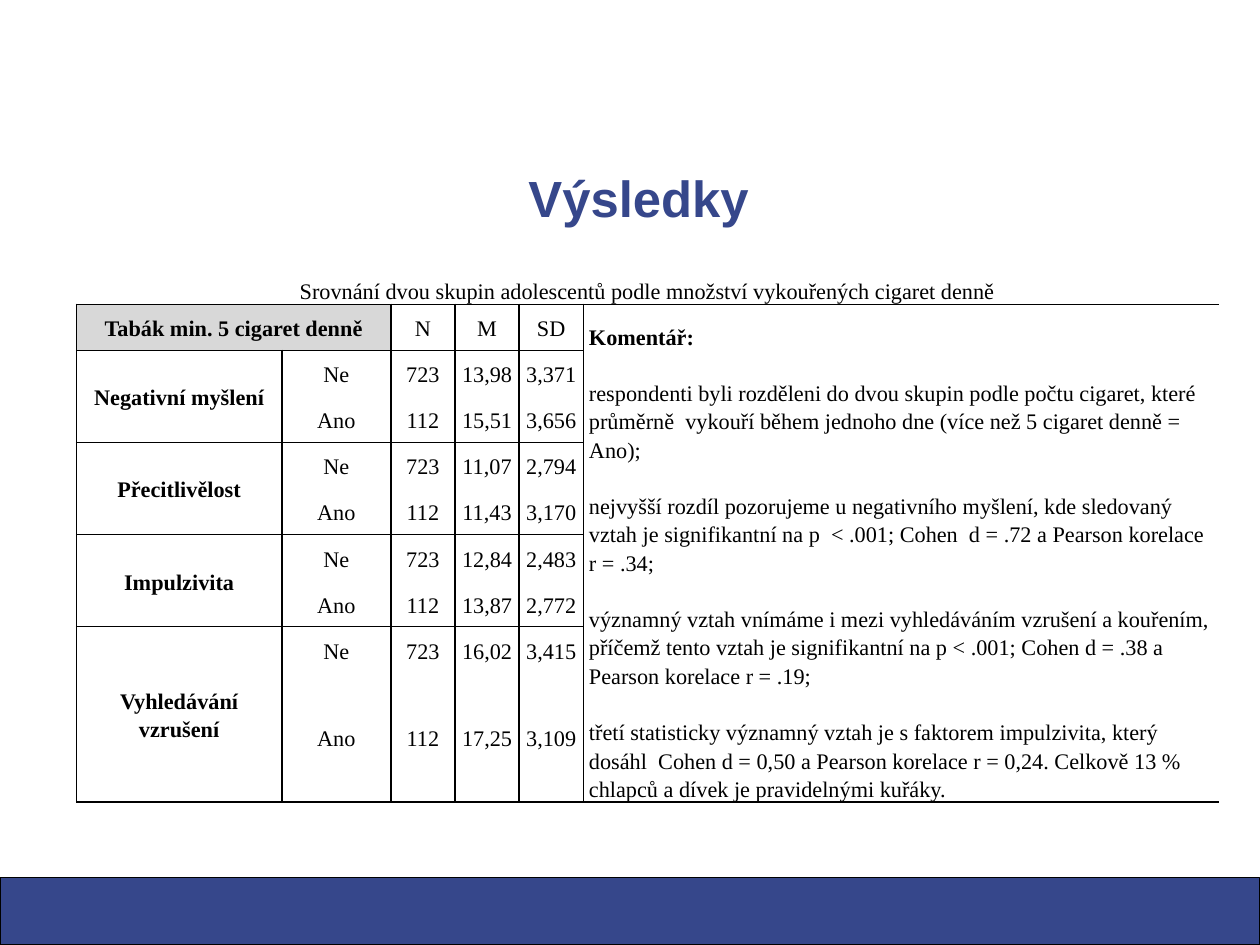
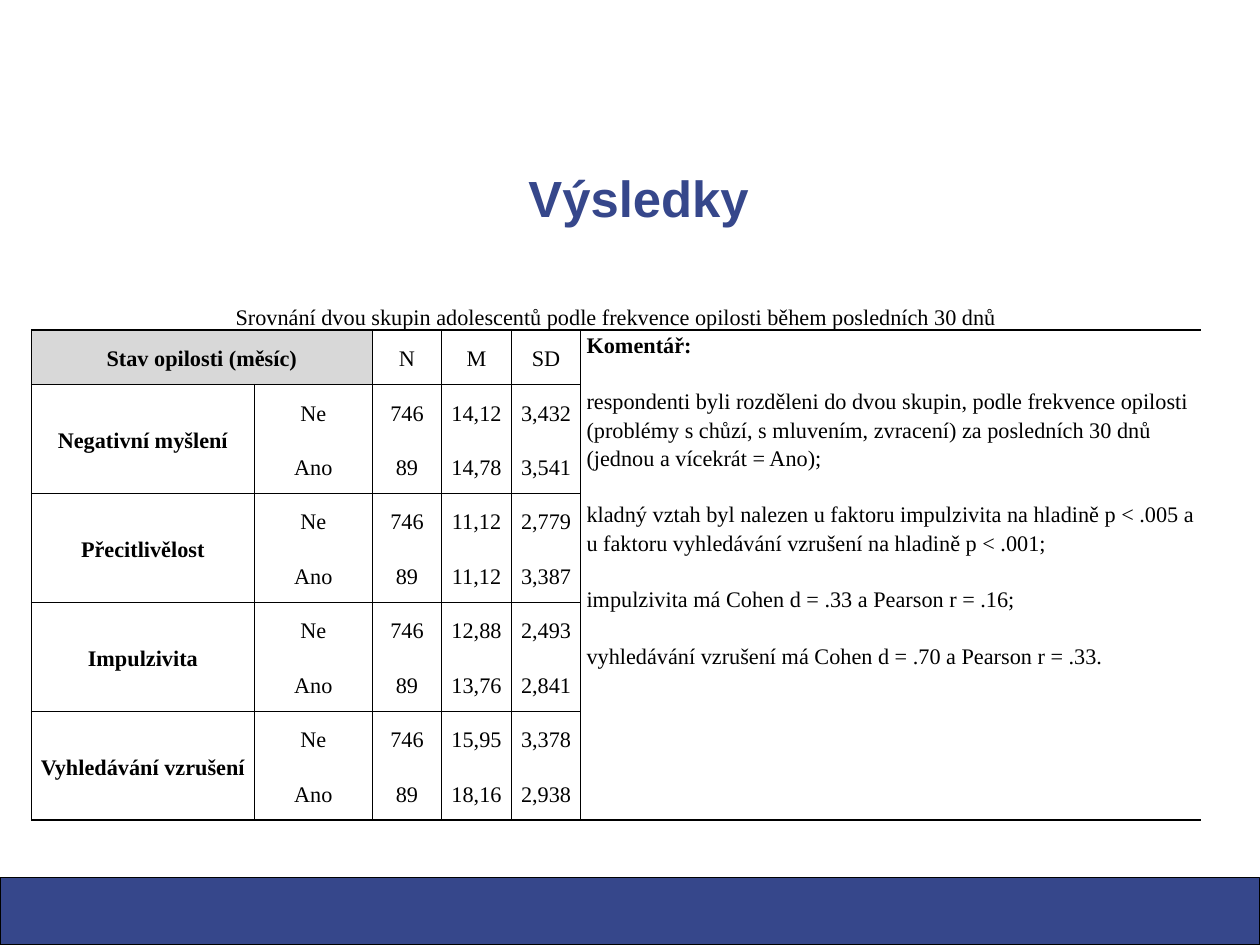
from dataclasses import dataclass
from lxml import etree
from pptx import Presentation
from pptx import util as u
from pptx.dml.color import RGBColor
from pptx.enum import shapes, text
from pptx.oxml import ns

Pt = u.Pt
WIDE, HIGH = 793.75, 595.25
PLAIN = "{2D5ABB26-0587-4C30-8999-92F81FD0307C}"
MID = text.PP_ALIGN.CENTER
LEFT = text.PP_ALIGN.LEFT


@dataclass(frozen=True)
class Theme:
    blue: str = "36478B"
    ink: str = "000000"
    grey: str = "D8D8D8"
    head: str = "Arial"
    body: str = "Times New Roman"
    big: float = 32
    small: float = 14
    lead: float = 1.15
    tight: float = 0.96
    gap: float = 17.8
    pad: float = 3.6
    rule: float = 1


T = Theme()


def tint(code):
    return RGBColor.from_string(code)


def style(para, face, size, color, bold, align, lead):
    para.alignment = align
    para.line_spacing = lead
    for run in para.runs:
        font = run.font
        font.name, font.size, font.bold = face, Pt(size), bold
        font.color.rgb = tint(color)


def edge(cell, sides, bare=""):
    props = cell._tc.get_or_add_tcPr()
    for side in "LRTB":
        if side in sides + bare:
            line = etree.SubElement(props, ns.qn(f"a:ln{side}"), w=str(Pt(T.rule)))
            if side in bare:
                etree.SubElement(line, ns.qn("a:noFill"))
            else:
                fill = etree.SubElement(line, ns.qn("a:solidFill"))
                etree.SubElement(fill, ns.qn("a:srgbClr"), val=T.ink)


def put(cell, lines, sides, bare="", bold=False, align=MID, lead=T.lead,
        anchor=text.MSO_ANCHOR.MIDDLE, fill=None):
    cell.margin_left = cell.margin_right = Pt(T.pad)
    cell.margin_top = cell.margin_bottom = 0
    cell.vertical_anchor = anchor
    edge(cell, sides, bare)
    if fill:
        cell.fill.solid()
        cell.fill.fore_color.rgb = tint(fill)
    else:
        cell.fill.background()
    cell.text_frame.text = "\n".join(lines)
    for i, para in enumerate(cell.text_frame.paragraphs):
        style(para, T.body, T.small, T.ink, bold, align, lead)
        if i:
            para.space_before = Pt(T.gap)


def band(slide, x, y, w, h):
    bar = slide.shapes.add_shape(shapes.MSO_SHAPE.RECTANGLE, Pt(x), Pt(y), Pt(w), Pt(h))
    bar.shadow.inherit = False
    bar.fill.solid()
    bar.fill.fore_color.rgb = tint(T.blue)
    bar.line.color.rgb = tint(T.ink)
    bar.line.width = Pt(0.75)


def title(slide, words, x, y, w, h):
    frame = slide.shapes.add_textbox(Pt(x), Pt(y), Pt(w), Pt(h)).text_frame
    frame.word_wrap = True
    frame.margin_left = frame.margin_right = frame.margin_top = frame.margin_bottom = 0
    frame.vertical_anchor = text.MSO_ANCHOR.MIDDLE
    frame.text = words
    style(frame.paragraphs[0], T.head, T.big, T.blue, True, MID, T.tight)


def grid(slide, data, x, y, cols, rows):
    frame = slide.shapes.add_table(len(rows), len(cols), Pt(x), Pt(y),
                                   Pt(sum(cols)), Pt(sum(rows)))
    table = frame.table
    table.first_row = table.horz_banding = False
    for node in frame.element.iter(ns.qn("a:tableStyleId")):
        node.text = PLAIN
    for col, w in zip(table.columns, cols):
        col.width = Pt(w)
    for row, h in zip(table.rows, rows):
        row.height = Pt(h)
    cell = table.cell

    cell(0, 0).merge(cell(0, 5))
    put(cell(0, 0), [data["caption"]], "B", anchor=text.MSO_ANCHOR.BOTTOM)
    cell(1, 0).merge(cell(1, 1))
    put(cell(1, 0), [data["head"]], "LRTB", bold=True, fill=T.grey)
    for c, name in enumerate(("N", "M", "SD"), 2):
        put(cell(1, c), [name], "LRTB")

    cell(1, 5).merge(cell(len(rows) - 1, 5))
    put(cell(1, 5), ["Komentář:"] + data["notes"], "LTB", bare="R", align=LEFT,
        anchor=data["anchor"], lead=data["lead"])
    cell(1, 5).text_frame.paragraphs[0].runs[0].font.bold = True
    for r in range(2, len(rows)):
        edge(cell(r, 5), "", "R")

    for g, (name, pair) in enumerate(zip(FACTORS, data["values"])):
        top = 2 + 2 * g
        cell(top, 0).merge(cell(top + 1, 0))
        put(cell(top, 0), [name], "LRTB", bold=True)
        for k, (answer, count) in enumerate(zip(("Ne", "Ano"), data["counts"])):
            for c, item in enumerate((answer, count, *pair[k]), 1):
                put(cell(top + k, c), [item], "LRB" if k else "LR")


FACTORS = ("Negativní myšlení", "Přecitlivělost", "Impulzivita", "Vyhledávání vzrušení")

TOBACCO = dict(
    caption="Srovnání dvou skupin adolescentů podle množství vykouřených cigaret denně",
    head="Tabák min. 5 cigaret denně",
    counts=("723", "112"),
    values=[
        (("13,98", "3,371"), ("15,51", "3,656")),
        (("11,07", "2,794"), ("11,43", "3,170")),
        (("12,84", "2,483"), ("13,87", "2,772")),
        (("16,02", "3,415"), ("17,25", "3,109")),
    ],
    anchor=text.MSO_ANCHOR.BOTTOM,
    lead=Pt(T.gap),
    notes=[
        "respondenti byli rozděleni do dvou skupin podle počtu cigaret, které "
        "průměrně  vykouří během jednoho dne (více než 5 cigaret denně = Ano);",
        "nejvyšší rozdíl pozorujeme u negativního myšlení, kde sledovaný vztah je "
        "signifikantní na p  < .001; Cohen  d = .72 a Pearson korelace r = .34;",
        "významný vztah vnímáme i mezi vyhledáváním vzrušení a kouřením, příčemž "
        "tento vztah je signifikantní na p < .001; Cohen d = .38 a Pearson "
        "korelace r = .19;",
        "třetí statisticky významný vztah je s faktorem impulzivita, který dosáhl  "
        "Cohen d = 0,50 a Pearson korelace r = 0,24. Celkově 13 % chlapců a dívek "
        "je pravidelnými kuřáky.",
    ],
)

ALCOHOL = dict(
    caption="Srovnání dvou skupin adolescentů podle frekvence opilosti během posledních 30 dnů",
    head="Stav opilosti (měsíc)",
    counts=("746", "89"),
    values=[
        (("14,12", "3,432"), ("14,78", "3,541")),
        (("11,12", "2,779"), ("11,12", "3,387")),
        (("12,88", "2,493"), ("13,76", "2,841")),
        (("15,95", "3,378"), ("18,16", "2,938")),
    ],
    anchor=text.MSO_ANCHOR.TOP,
    lead=T.lead,
    notes=[
        "respondenti byli rozděleni do dvou skupin, podle frekvence opilosti "
        "(problémy s chůzí, s mluvením, zvracení) za posledních 30 dnů (jednou a "
        "vícekrát = Ano);",
        "kladný vztah byl nalezen u faktoru impulzivita na hladině p < .005 a u "
        "faktoru vyhledávání vzrušení na hladině p < .001;",
        "impulzivita má Cohen d = .33 a Pearson r = .16;",
        "vyhledávání vzrušení má Cohen d = .70 a Pearson r = .33.",
    ],
)


def page(deck, data, x, y, cols, rows):
    slide = deck.slides.add_slide(deck.slide_layouts[6])
    band(slide, 0, 552.75, WIDE, HIGH - 552.75)
    title(slide, "Výsledky", 25.5, 106, 753.8, 39.6)
    grid(slide, data, x, y, cols, rows)


def main():
    deck = Presentation()
    deck.slide_width, deck.slide_height = Pt(WIDE), Pt(HIGH)
    page(deck, TOBACCO, 48.2, 162.6,
         [129.4, 68.7] + [40.4] * 3 + [400.3], [29.05] * 9 + [81.4])
    page(deck, ALCOHOL, 19.8, 173.6,
         [140.4, 74.3] + [43.8] * 3 + [390.6], [34.3] * 10)
    deck.save("out.pptx")


if __name__ == "__main__":
    main()
